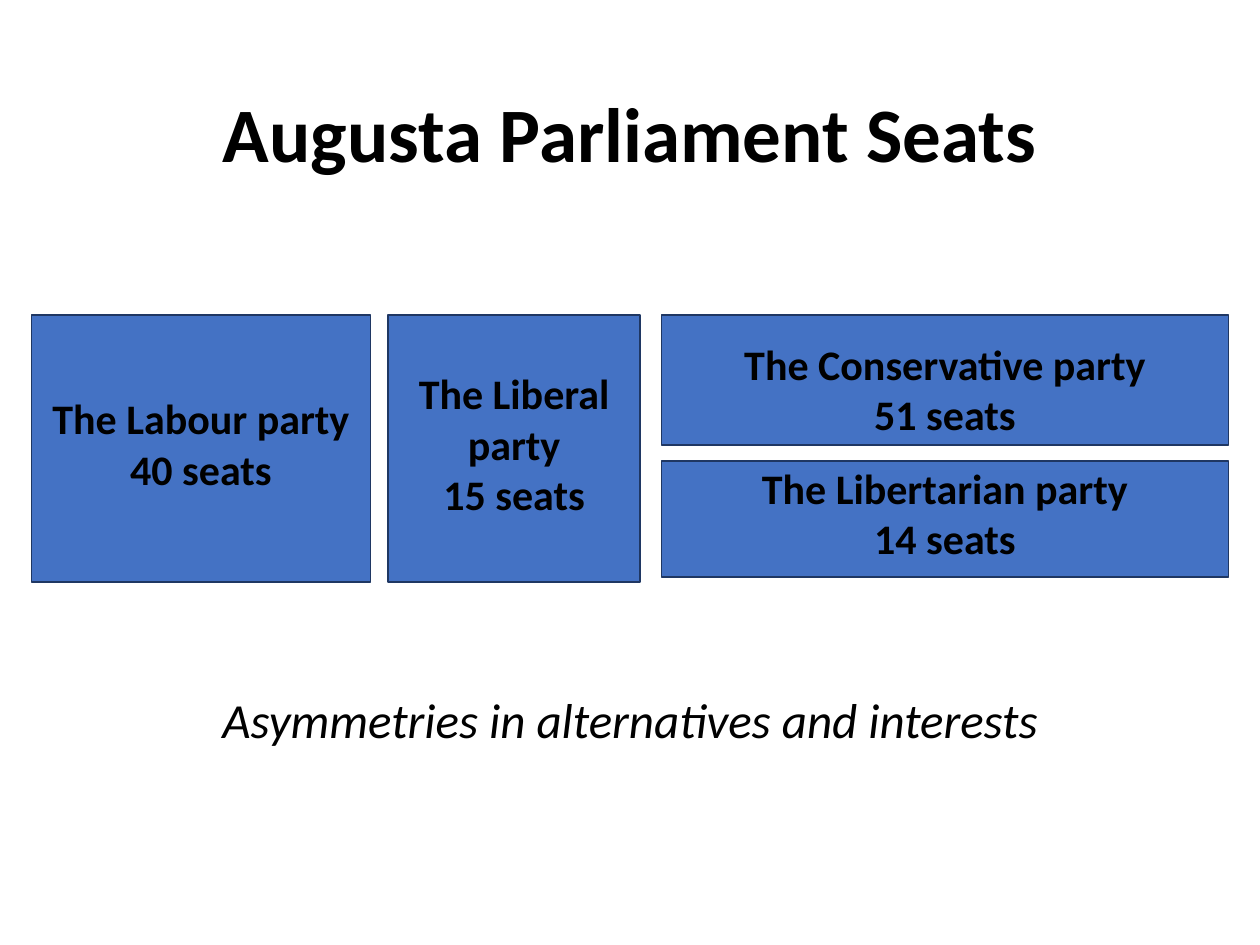
from pptx import Presentation
from pptx.dml.color import RGBColor
from pptx.enum.shapes import MSO_SHAPE
from pptx.enum.text import MSO_ANCHOR, PP_ALIGN
from pptx.util import Pt

RECT = MSO_SHAPE.RECTANGLE
MIDDLE = MSO_ANCHOR.MIDDLE
CENTER = PP_ALIGN.CENTER
TITLE_ONLY = 5

COLORS = {"box": "4472C4", "border": "1F3763", "text": "000000"}
TITLE_FONT = {"name": "Calibri", "size": Pt(44), "bold": True}
PARTY_FONT = {"name": "Calibri", "size": Pt(24), "bold": True}
CAPTION_FONT = {"name": "Calibri", "size": Pt(28), "italic": True}

# name, seats, box within the diagram, top and bottom inset
PARTIES = [
    ("The Labour party", 40, (0, 0, 193.7, 152.6), (3.6, 9.6)),
    ("The Liberal party", 15, (203.8, 0, 144, 152.6), (3.6, 9.6)),
    ("The Conservative party", 51, (360, 0, 324, 74.2), (10, 0)),
    ("The Libertarian party", 14, (360, 83.5, 324, 66.2), (0, 7)),
]


def rgb(key):
    return RGBColor.from_string(COLORS[key])


def write(tf, lines, font):
    """Fill a text frame with centred paragraphs in one font."""
    tf.word_wrap = True
    tf.vertical_anchor = MIDDLE
    for i, line in enumerate(lines):
        p = tf.paragraphs[0] if i == 0 else tf.add_paragraph()
        p.alignment = CENTER
        r = p.add_run()
        r.text = line
        for name, value in font.items():
            setattr(r.font, name, value)
        r.font.color.rgb = rgb("text")


def add_title(s, box, text):
    sp = s.shapes.title
    sp.left, sp.top, sp.width, sp.height = map(Pt, box)
    write(sp.text_frame, [text], TITLE_FONT)


def add_parties(s, left, top):
    for name, seats, (x, y, w, h), insets in PARTIES:
        sp = s.shapes.add_shape(RECT, Pt(left + x), Pt(top + y), Pt(w), Pt(h))
        sp.shadow.inherit = False
        sp.fill.solid()
        sp.fill.fore_color.rgb = rgb("box")
        sp.line.color.rgb = rgb("border")
        sp.line.width = Pt(1)
        tf = sp.text_frame
        tf.margin_top, tf.margin_bottom = map(Pt, insets)
        write(tf, [name, f"{seats} seats"], PARTY_FONT)


def add_caption(s, box, text):
    sp = s.shapes.add_textbox(*map(Pt, box))
    write(sp.text_frame, [text], CAPTION_FONT)


def main():
    prs = Presentation()
    prs.slide_width, prs.slide_height = Pt(720), Pt(540)
    s = prs.slides.add_slide(prs.slide_layouts[TITLE_ONLY])
    add_title(s, (36, 30, 648, 90), "Augusta Parliament Seats")
    add_parties(s, 18, 180)
    add_caption(s, (36, 366, 648, 90), "Asymmetries in alternatives and interests")
    prs.save("out.pptx")


if __name__ == "__main__":
    main()
